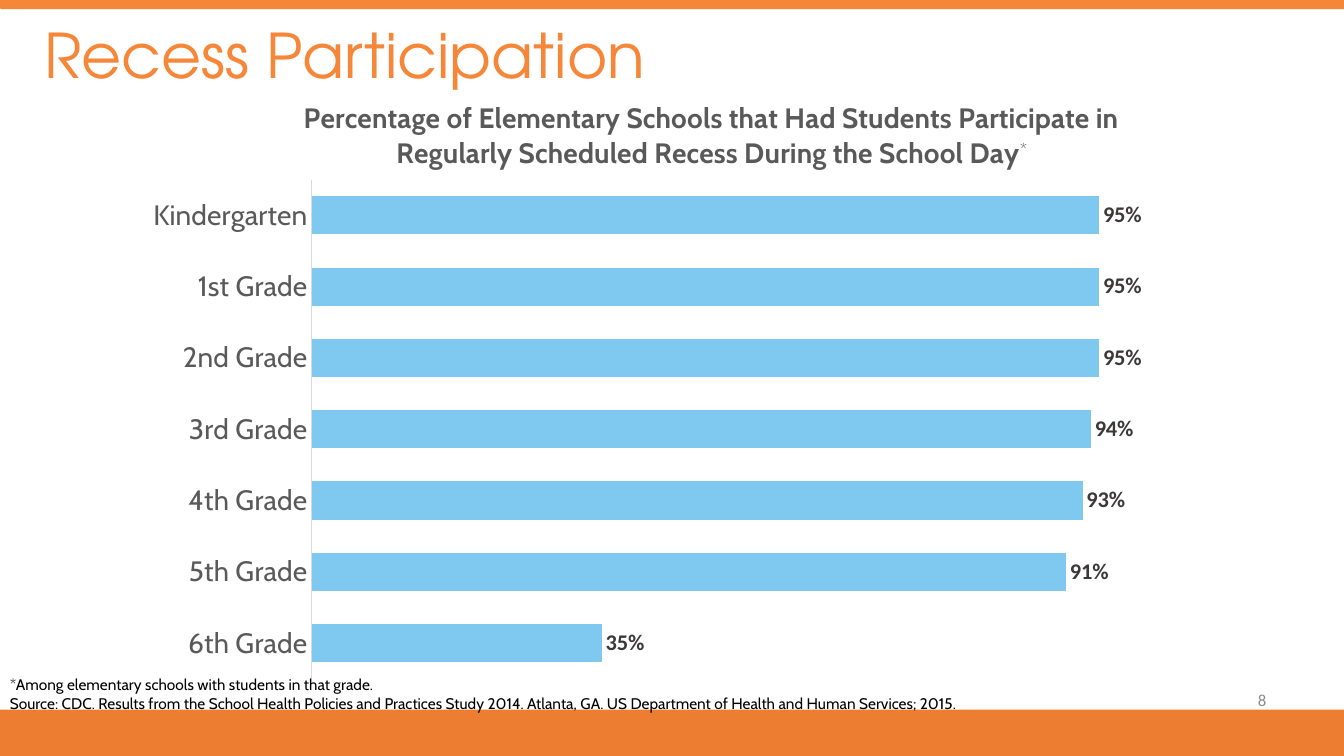
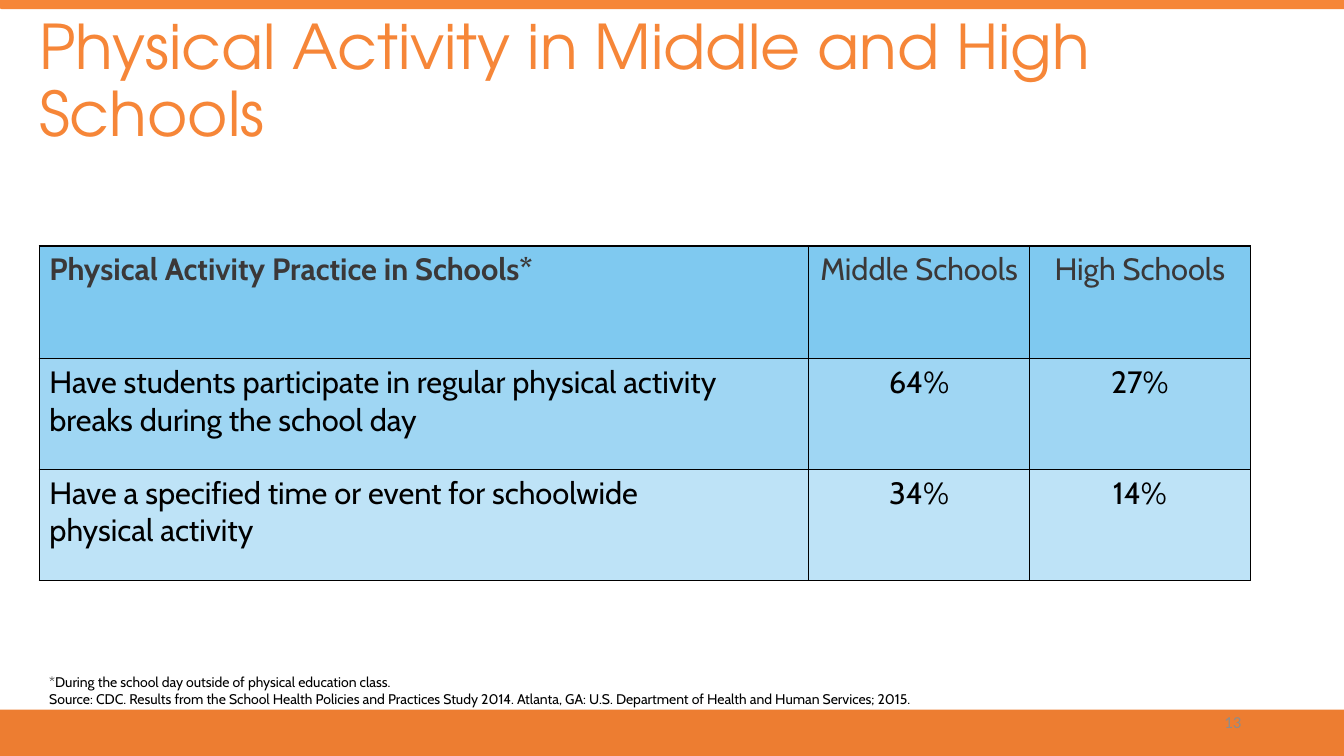
from pptx import Presentation
from pptx.chart.data import CategoryChartData
from pptx.dml.color import RGBColor
from pptx.enum.chart import XL_CHART_TYPE as ChartType
from pptx.enum.chart import XL_LABEL_POSITION as LabelPosition
from pptx.enum.chart import XL_TICK_MARK as TickMark
from pptx.enum.shapes import MSO_SHAPE as Preset
from pptx.enum.text import MSO_ANCHOR as Anchor
from pptx.enum.text import PP_ALIGN as Align
from pptx.oxml import parse_xml
from pptx.oxml.ns import nsdecls
from pptx.util import Pt

SCALE = 9144  # EMU in one px, 100 px to the inch
WIDTH, HEIGHT = 1333, 750

COLORS = {
    "title": "F68638",
    "footer": "ED7D31",
    "blue": "7FC9F0",
    "dark": "3B3838",
    "gray": "595959",
    "rule": "D9D9D9",
    "number": "8C8C8C",
    "black": "000000",
}
TITLE_FONT, BODY_FONT, NUMBER_FONT = "TeX Gyre Adventor", "Cabin", "Calibri"


def emu(*lengths):
    return [length * SCALE for length in lengths]


def rgb(name):
    return RGBColor.from_string(COLORS[name])


def style_font(font, size, color, name=BODY_FONT, bold=False):
    font.size, font.name, font.bold = Pt(size), name, bold
    font.color.rgb = rgb(color)


def add_text_shadow(span):
    fill = span._r.get_or_add_rPr().xpath("./a:solidFill")[0]
    fill.addnext(parse_xml(
        f'<a:effectLst {nsdecls("a")}><a:outerShdw blurRad="38100" dist="38100" '
        'dir="2700000" algn="tl"><a:srgbClr val="000000"><a:alpha val="43000"/>'
        "</a:srgbClr></a:outerShdw></a:effectLst>"
    ))


def place_by_fraction(element, index, **fractions):
    """Give a chart part a manual layout, in fractions of the chart."""
    for old in element.xpath("./c:layout"):
        element.remove(old)
    target = '<c:layoutTarget val="inner"/>' if "w" in fractions else ""
    modes = '<c:xMode val="edge"/><c:yMode val="edge"/>'
    values = "".join(f'<c:{key} val="{value}"/>' for key, value in fractions.items())
    element.insert(index, parse_xml(
        f'<c:layout {nsdecls("c")}><c:manualLayout>{target}{modes}{values}'
        "</c:manualLayout></c:layout>"
    ))


def paint_cell(cell, color, opacity):
    """Black 1 pt borders and a fill of the given opacity in percent."""
    properties = cell._tc.get_or_add_tcPr()
    for side in ("lnL", "lnR", "lnT", "lnB"):
        properties.append(parse_xml(
            f'<a:{side} {nsdecls("a")} w="12700"><a:solidFill>'
            f'<a:srgbClr val="{COLORS["black"]}"/></a:solidFill></a:{side}>'
        ))
    cell.fill.solid()
    cell.fill.fore_color.rgb = rgb(color)
    if opacity < 100:
        shade = properties.xpath("./a:solidFill/a:srgbClr")[0]
        shade.append(parse_xml(f'<a:alpha {nsdecls("a")} val="{opacity * 1000}"/>'))


class Deck:
    def __init__(self):
        self.file = Presentation()
        self.file.slide_width, self.file.slide_height = emu(WIDTH, HEIGHT)
        self.page = None

    def add_page(self):
        self.page = self.file.slides.add_slide(self.file.slide_layouts[6])
        self.band(Preset.RECTANGLE, 0, 704, WIDTH, 46, "footer")
        self.band(Preset.ROUNDED_RECTANGLE, 0, -1, 1347, 10, "title")

    def band(self, preset, left, top, width, height, color):
        shape = self.page.shapes.add_shape(preset, *emu(left, top, width, height))
        shape.shadow.inherit = False
        shape.fill.solid()
        shape.fill.fore_color.rgb = rgb(color)
        shape.line.fill.background()

    def text(self, words, at, size, color, font=BODY_FONT,
             anchor=Anchor.TOP, align=Align.LEFT):
        box = self.page.shapes.add_textbox(*emu(*at))
        frame = box.text_frame
        frame.word_wrap = True
        frame.vertical_anchor = anchor
        frame.text = words
        for para in frame.paragraphs:
            para.alignment = align
            for span in para.runs:
                style_font(span.font, size, color, font)
        return frame

    def title(self, words, left, top, width):
        frame = self.text(words, (left, top, width, 145), 44, "title",
                          TITLE_FONT, Anchor.MIDDLE)
        para = frame.paragraphs[0]
        para.line_spacing = 0.9
        add_text_shadow(para.runs[0])

    def footnote(self, words, left, top, width, size):
        self.text(words, (left, top, width, 47), size, "black")

    def page_number(self, number, left, top):
        self.text(str(number), (left, top, 300, 40), 12, "number",
                  NUMBER_FONT, Anchor.MIDDLE, Align.RIGHT)

    def bar_chart(self, heading, mark, values, at):
        """Horizontal bars of shares, with a superscript mark after the heading."""
        data = CategoryChartData(number_format="0%")
        data.categories = list(values)
        data.add_series("Series 1", list(values.values()))
        chart = self.page.shapes.add_chart(
            ChartType.BAR_CLUSTERED, *emu(*at), data).chart
        chart.has_legend = False
        style_font(chart.font, 10, "black", NUMBER_FONT)

        chart.has_title = True
        frame = chart.chart_title.text_frame
        frame.text = heading
        for para in frame.paragraphs:
            para.alignment = Align.CENTER
            style_font(para.runs[0].font, 20, "gray", bold=True)
        star = frame.paragraphs[-1].add_run()
        star.text = mark
        style_font(star.font, 20, "gray")
        star._r.get_or_add_rPr().set("baseline", "30000")
        place_by_fraction(chart.chart_title._element, 1, x=0.21, y=0.05)

        plot_area = chart._chartSpace.chart.plotArea
        place_by_fraction(plot_area, 0, x=0.22, y=0.18, w=0.76, h=0.78)

        grades = chart.category_axis
        grades.reverse_order = True
        grades.major_tick_mark = grades.minor_tick_mark = TickMark.NONE
        grades.format.line.color.rgb = rgb("rule")
        grades.format.line.width = Pt(0.75)
        style_font(grades.tick_labels.font, 20, "gray")
        shares = chart.value_axis
        shares.minimum_scale, shares.maximum_scale = 0, 1
        shares.has_major_gridlines = False
        shares.visible = False

        plot = chart.plots[0]
        plot.gap_width, plot.overlap = 87, -20
        plot.vary_by_categories = False
        bars = plot.series[0].format.fill
        bars.solid()
        bars.fore_color.rgb = rgb("blue")
        plot.has_data_labels = True
        labels = plot.data_labels
        labels.show_value = True
        labels.position = LabelPosition.OUTSIDE_END
        labels.number_format, labels.number_format_is_linked = "0%", False
        style_font(labels.font, 16, "dark", NUMBER_FONT, bold=True)

    def table(self, rows, left, top, widths, heights, opacities):
        """Table with a bold first heading and centred figures."""
        at = emu(left, top, sum(widths), sum(heights))
        table = self.page.shapes.add_table(len(rows), len(widths), *at).table
        table.horz_banding = False
        for column, width in zip(table.columns, emu(*widths)):
            column.width = width
        for row, height in zip(table.rows, emu(*heights)):
            row.height = height
        for i, words in enumerate(rows):
            for j, word in enumerate(words):
                cell = table.cell(i, j)
                paint_cell(cell, "blue", opacities[i])
                cell.text_frame.text = word
                for para in cell.text_frame.paragraphs:
                    para.alignment = Align.CENTER if j else Align.LEFT
                    style_font(para.runs[0].font, 22, "black" if i else "dark",
                               bold=i == j == 0)


def main():
    deck = Deck()

    deck.add_page()
    deck.title("Recess Participation", 34, -14, 878)
    deck.bar_chart(
        "Percentage of Elementary Schools that Had Students Participate in\n"
        "Regularly Scheduled Recess During the School Day",
        "*",
        {
            "Kindergarten": 0.95,
            "1st Grade": 0.95,
            "2nd Grade": 0.95,
            "3rd Grade": 0.94,
            "4th Grade": 0.93,
            "5th Grade": 0.91,
            "6th Grade": 0.35,
        },
        (71, 64, 1082, 635),
    )
    deck.footnote(
        "*Among elementary schools with students in that grade.\n"
        "Source: CDC. Results from the School Health Policies and Practices Study "
        "2014. Atlanta, GA. US Department of Health and Human Services; 2015.",
        0, 665, 1277, 11)
    deck.page_number(8, 966, 674)

    deck.add_page()
    deck.title("Physical Activity in Middle and High Schools", 29, 10, 1268)
    deck.table(
        [
            ("Physical Activity Practice in Schools*", "Middle Schools", "High Schools"),
            ("Have students participate in regular physical activity "
             "breaks during the school day", "64%", "27%"),
            ("Have a specified time or event for schoolwide\nphysical activity",
             "34%", "14%"),
        ],
        39, 244, (763, 219, 219), (112, 110, 110), (100, 75, 50))
    deck.footnote(
        "*During the school day outside of physical education class.\n"
        "Source: CDC. Results from the School Health Policies and Practices Study "
        "2014. Atlanta, GA: U.S. Department of Health and Human Services; 2015.",
        39, 663, 1290, 10)
    deck.page_number(13, 941, 696)

    deck.file.save("out.pptx")


if __name__ == "__main__":
    main()
